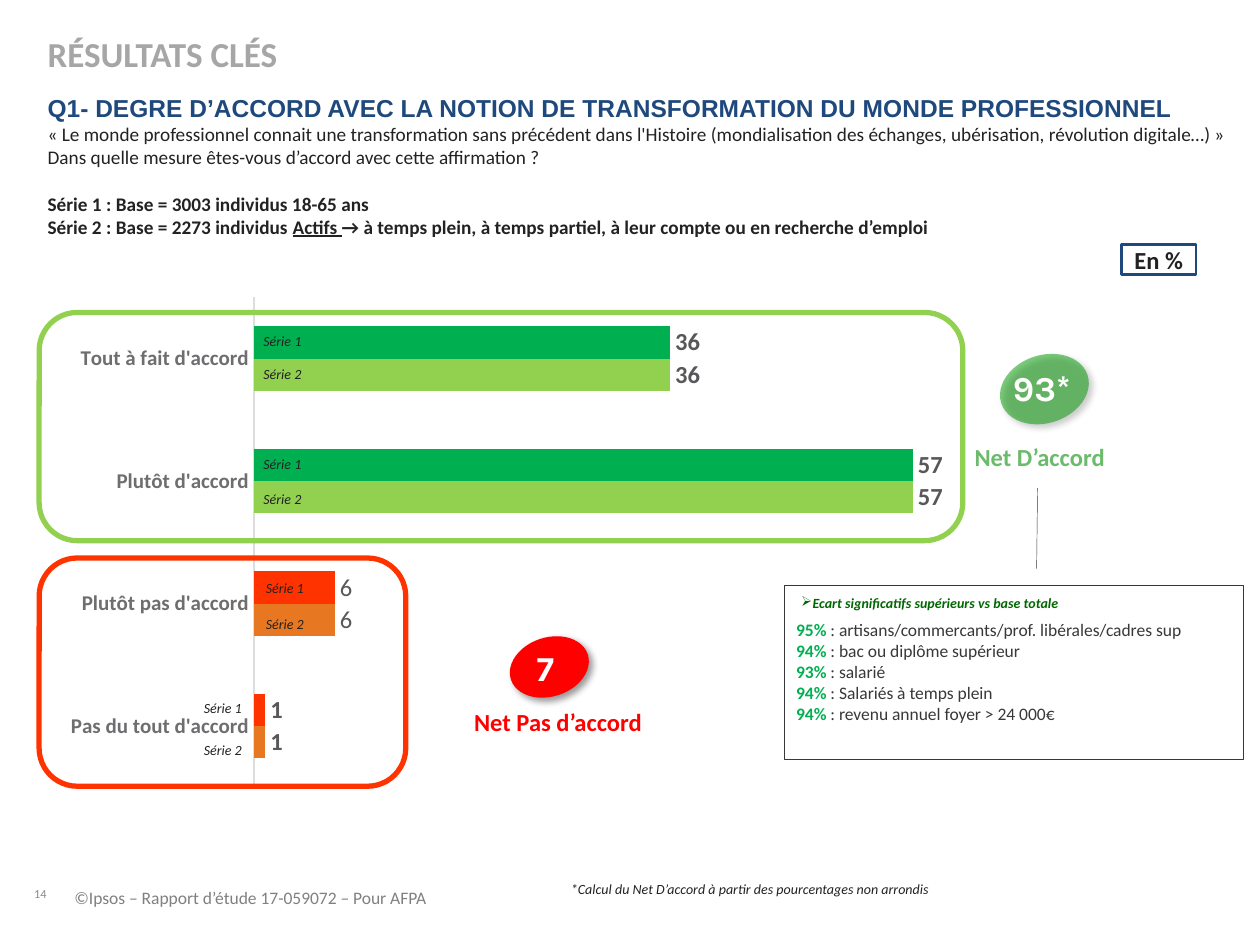
from lxml import etree
from pptx import Presentation
from pptx import util as u
from pptx.chart import data as chart_data
from pptx.dml.color import RGBColor
from pptx.enum import chart as ch, shapes, text
from pptx.oxml import ns, parse_xml

COLORS = {
    "ink": "222223", "navy": "1F497D", "title": "A6A6A6", "footer": "808080",
    "page": "888B8D", "white": "FFFFFF", "red": "FF0000", "net": "6CBA6C",
    "oval": "009900", "strong": "00B050", "light": "92D050", "alert": "FF3300",
    "orange": "E87722", "axis": "DDDDDE", "category": "6E6E71",
    "value": "58585B", "body": "383839", "remark": "016701",
}


def rgb(name):
    return RGBColor.from_string(COLORS[name])


def set_font(font, size, color, name="Calibri", bold=False, italic=False, underline=False):
    font.size, font.name = u.Pt(size), name
    font.bold, font.italic, font.underline = bold, italic, underline
    font.color.rgb = rgb(color)


def add_text(paragraph, content, **style):
    """Add one run of text in the given format."""
    run = paragraph.add_run()
    run.text = content
    set_font(run.font, **style)


class SlideBuilder:
    def __init__(self, presentation):
        self.slide = presentation.slides.add_slide(presentation.slide_layouts[6])
        self.small = dict(size=8, color="ink", italic=True)

    def frame(self, shape, inset, wrap, anchor):
        frame = shape.text_frame
        frame.word_wrap, frame.vertical_anchor = wrap, anchor
        if not inset:
            frame.margin_left = frame.margin_right = u.Cm(0)
            frame.margin_top = frame.margin_bottom = u.Cm(0)
        return frame

    def text(self, box, lines, align=text.PP_ALIGN.LEFT, inset=False, wrap=True,
             anchor=text.MSO_ANCHOR.TOP, shape=None):
        """Write lines, each a list of (text, style) pairs, in a box or a shape."""
        shape = shape or self.slide.shapes.add_textbox(*map(u.Cm, box))
        frame = self.frame(shape, inset, wrap, anchor)
        for index, runs in enumerate(lines):
            paragraph = frame.add_paragraph() if index else frame.paragraphs[0]
            paragraph.alignment = align
            for content, style in runs:
                add_text(paragraph, content, **style)
        return frame

    def shape(self, kind, box, fill=None, line=None, width=1):
        shape = self.slide.shapes.add_shape(kind, *map(u.Cm, box))
        shape.shadow.inherit = False
        if fill:
            shape.fill.solid()
            shape.fill.fore_color.rgb = rgb(fill)
        else:
            shape.fill.background()
        if line:
            shape.line.color.rgb = rgb(line)
            shape.line.width = u.Pt(width)
        else:
            shape.line.fill.background()
        return shape

    def badge(self, box, fill, number, number_box, alpha=None):
        """Tilted oval with a soft shadow and a number on top."""
        oval = self.shape(shapes.MSO_SHAPE.OVAL, box, fill)
        oval.rotation = 342
        properties = oval._element.spPr
        if alpha:
            color = properties.find(ns.qn("a:solidFill"))[0]
            etree.SubElement(color, ns.qn("a:alpha"), val=str(alpha * 1000))
        properties.find(ns.qn("a:effectLst")).append(parse_xml(
            f'<a:outerShdw {ns.nsdecls("a")} blurRad="50800" dist="38100" dir="2700000">'
            '<a:srgbClr val="000000"><a:alpha val="40000"/></a:srgbClr></a:outerShdw>'))
        style = dict(size=20, color="white", name="Karla", bold=True)
        self.text(number_box, [[(number, style)]], inset=True, wrap=False)

    def bar_chart(self, box, categories, values, point_colors, relabelled):
        data = chart_data.CategoryChartData()
        data.categories = categories
        for name in point_colors:
            data.add_series(name, values)
        chart = self.slide.shapes.add_chart(
            ch.XL_CHART_TYPE.BAR_CLUSTERED, *map(u.Cm, box), data).chart
        chart.has_legend = chart.has_title = False
        set_font(chart.font, 10, "ink")

        # Axes
        axis = chart.category_axis
        axis.major_tick_mark = axis.minor_tick_mark = ch.XL_TICK_MARK.NONE
        axis.has_major_gridlines = False
        axis.format.line.color.rgb = rgb("axis")
        axis.format.line.width = u.Pt(0.75)
        set_font(axis.tick_labels.font, 12, "category", bold=True)
        scale = chart.value_axis
        scale.minimum_scale, scale.maximum_scale = 0, 60
        scale.has_major_gridlines = scale.visible = False

        # Bars and labels
        plot = chart.plots[0]
        plot.gap_width, plot.overlap, plot.vary_by_categories = 182, 0, False
        for series, colors in zip(plot.series, point_colors.values()):
            series.invert_if_negative = False
            for index, color in enumerate(colors):
                fill = series.points[index].format.fill
                fill.solid()
                fill.fore_color.rgb = rgb(color)
            labels = series.data_labels
            labels.show_value = True
            labels.position = ch.XL_LABEL_POSITION.OUTSIDE_END
            set_font(labels.font, 14, "value", bold=True)
            for index, content in relabelled.items():
                label = series.points[index].data_label
                add_text(label.text_frame.paragraphs[0], content, size=14, color="value")
                label.position = ch.XL_LABEL_POSITION.OUTSIDE_END

        # Inner plot area as fractions of the chart
        area = chart._chartSpace.chart.plotArea
        for layout in area.findall(ns.qn("c:layout")):
            area.remove(layout)
        places = "".join(f'<c:{key} val="{value}"/>' for key, value in (
            ("layoutTarget", "inner"), ("xMode", "edge"), ("yMode", "edge"),
            ("x", 0.218), ("y", 0.034), ("w", 0.744), ("h", 0.876)))
        area.insert(0, parse_xml(
            f'<c:layout {ns.nsdecls("c")}><c:manualLayout>{places}</c:manualLayout></c:layout>'))


def main():
    presentation = Presentation()
    presentation.slide_width, presentation.slide_height = u.Cm(25.4), u.Cm(19.05)
    builder = SlideBuilder(presentation)
    center, middle = text.PP_ALIGN.CENTER, text.MSO_ANCHOR.MIDDLE

    # Chart and the frames around each pair of answers
    builder.bar_chart(
        (1.02, 5.61, 18.8, 11.28),
        ["Pas du tout d'accord", "Plutôt pas d'accord", "Plutôt d'accord", "Tout à fait d'accord"],
        [1, 7, 57, 36],
        {"Series 1": ["orange"] * 2 + ["light"] * 2,
         "Series 2": ["alert"] * 2 + ["strong"] * 2},
        relabelled={1: "6"})
    for top, width, color in ((6.3, 18.62, "light"), (11.25, 7.39, "alert")):
        builder.shape(shapes.MSO_SHAPE.ROUNDED_RECTANGLE, (0.79, top, width, 4.6),
                      line=color, width=3)

    # Series names on the bars
    for left, tops in ((5.31, (6.71, 7.37)), (5.31, (9.19, 9.88)),
                       (5.36, (11.68, 12.4)), (4.11, (14.1, 14.94))):
        for number, top in enumerate(tops, 1):
            builder.text((left, top, 0.97, 0.33), [[(f"Série {number}", builder.small)]])

    # Net scores
    builder.badge((20.14, 7.16, 1.83, 1.37), "oval", "93*", (20.17, 7.26, 1.88, 1.12), alpha=51)
    builder.badge((10.26, 12.85, 1.63, 1.19), "red", "7", (10.57, 12.9, 0.97, 1.12))
    for box, label, color in (((19.46, 8.92, 3, 0.61), "Net D’accord", "net"),
                              ((9.47, 14.25, 3.56, 0.61), "Net Pas d’accord", "red")):
        builder.text(box, [[(label, dict(size=14, color=color, bold=True))]], center)

    # Title, question and bases
    builder.text((0.71, 0.53, 19.1, 1.22),
                 [[("RÉSULTATS CLÉS", dict(size=20, color="title", bold=True))]], inset=True)
    plain = dict(size=11, color="ink")
    strong = dict(plain, bold=True)
    question = builder.text((0.71, 1.75, 26.59, 4.27), [
        [("Q1- DEGRE D’ACCORD AVEC LA NOTION DE TRANSFORMATION DU MONDE PROFESSIONNEL",
          dict(size=14, color="navy", name="Arial", bold=True))],
        [("« Le monde professionnel connait une transformation sans précédent dans l'Histoire "
          "(mondialisation des échanges, ubérisation, révolution digitale…) »", plain)],
        [("Dans quelle mesure êtes-vous d’accord avec cette affirmation ?", plain)],
        [("Série 1 : Base = 3003 individus 18-65 ans", strong)],
        [("Série 2 : Base = 2273 individus ", strong),
         ("Actifs ", dict(strong, underline=True)),
         ("→ à temps plein, à temps partiel, à leur compte ou en recherche d’emploi", strong)],
    ], inset=True)
    question.paragraphs[3].space_before = u.Pt(13.4)

    # Unit
    unit = builder.shape(shapes.MSO_SHAPE.RECTANGLE, (22.61, 4.93, 1.5, 0.61),
                         line="navy", width=1.5)
    builder.text(None, [[("En %", dict(size=14, color="ink", bold=True))]], center,
                 anchor=middle, shape=unit)

    # Callout with the significant gaps
    callout = builder.shape(shapes.MSO_SHAPE.LINE_CALLOUT_1, (15.8, 11.79, 9.27, 3.51),
                            line="body", width=0.25)
    for index, value in enumerate((-0.093, 0.55, -0.556, 0.552)):
        callout.adjustments[index] = value
    gaps = [(95, "artisans/commercants/prof. libérales/cadres sup"),
            (94, "bac ou diplôme supérieur"), (93, "salarié"),
            (94, "Salariés à temps plein"), (94, "revenu annuel foyer > 24 000€")]
    builder.text(None, [[(f"{share}% ", dict(size=10, color="strong", bold=True)),
                         (f": {group}", dict(size=10, color="body"))] for share, group in gaps],
                 inset=True, anchor=middle, shape=callout)
    remark = builder.text((15.9, 11.99, 8.41, 0.33), [
        [("Ecart significatifs supérieurs vs base totale",
          dict(size=8, color="remark", bold=True, italic=True))]])
    properties = remark.paragraphs[0]._p.get_or_add_pPr()
    properties.set("marL", str(u.Cm(0.48)))
    properties.set("indent", str(u.Cm(-0.23)))
    etree.SubElement(properties, ns.qn("a:buChar"), char="➢")

    # Footer
    builder.text((0.69, 17.25, 1.55, 0.91), [[("14", dict(size=7, color="page"))]],
                 anchor=text.MSO_ANCHOR.BOTTOM)
    builder.text((1.5, 17.88, 13.06, 0.79),
                 [[("©Ipsos – Rapport d’étude 17-059072 – Pour AFPA",
                    dict(size=10, color="footer"))]])
    builder.text((11.51, 17.75, 8.33, 0.69),
                 [[("*Calcul du Net D’accord à partir des pourcentages non arrondis",
                    builder.small)]])

    presentation.save("out.pptx")


if __name__ == "__main__":
    main()
